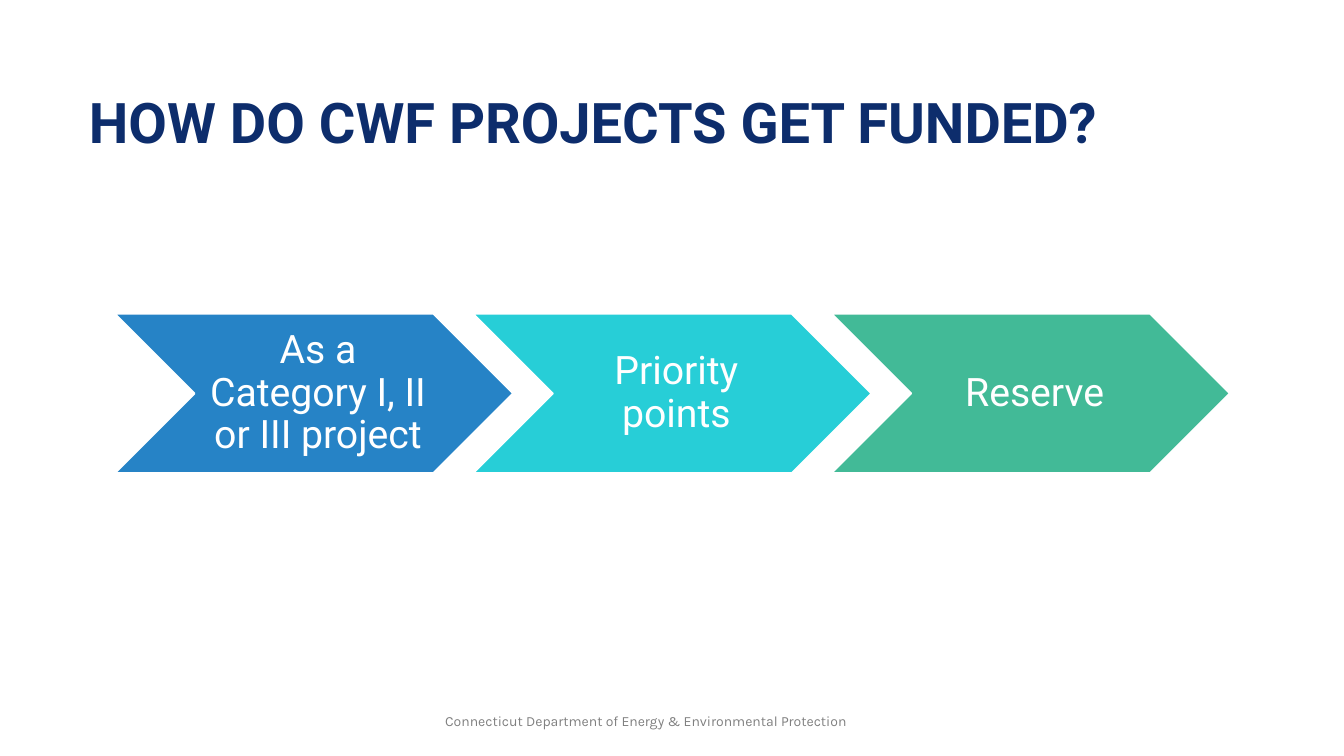
from pptx import Presentation
from pptx.dml.color import RGBColor
from pptx.enum.shapes import MSO_SHAPE
from pptx.enum.text import MSO_ANCHOR, MSO_AUTO_SIZE, PP_ALIGN
from pptx.util import Cm, Pt

NAVY = RGBColor(0x0D, 0x2D, 0x6C)
GRAY = RGBColor(0x80, 0x80, 0x80)
WHITE = RGBColor(0xFF, 0xFF, 0xFF)
BLUE = RGBColor(0x26, 0x83, 0xC6)
CYAN = RGBColor(0x27, 0xCE, 0xD7)
GREEN = RGBColor(0x42, 0xBA, 0x97)

TITLE = {"name": "Roboto", "size": Pt(40), "bold": True}
STEP = {"name": "Roboto", "size": Pt(28)}
FOOT = {"name": "Karla", "size": Pt(10)}

STEPS = [
    ("As a Category I, II or III project", BLUE),
    ("Priority points", CYAN),
    ("Reserve", GREEN),
]
LEFT, TOP, WIDE, HIGH = 2.9, 7.91, 10.03, 4.01
PITCH = 9.03


def put_text(shape, text, style, color, align, anchor, inset, spacing=1.0):
    """Fill a shape with one paragraph; inset is left, top, right, bottom in cm."""
    frame = shape.text_frame
    sides = ("margin_left", "margin_top", "margin_right", "margin_bottom")
    form = {"word_wrap": True, "auto_size": MSO_AUTO_SIZE.NONE,
            "vertical_anchor": anchor}
    form.update(zip(sides, map(Cm, inset)))
    for key, value in form.items():
        setattr(frame, key, value)
    para = frame.paragraphs[0]
    para.alignment = align
    para.line_spacing = spacing
    run = para.add_run()
    run.text = text
    for key, value in style.items():
        setattr(run.font, key, value)
    run.font.color.rgb = color


def add_title(slide, text):
    title = slide.shapes.title
    box = {"left": Cm(2.24), "top": Cm(2.54),
           "width": Cm(29.39), "height": Cm(3.3)}
    for key, value in box.items():
        setattr(title, key, value)
    put_text(title, text, TITLE, NAVY, PP_ALIGN.LEFT, MSO_ANCHOR.TOP,
             (0, 0, 0, 0), 0.8)


def add_step(slide, left, text, color):
    step = slide.shapes.add_shape(
        MSO_SHAPE.CHEVRON, Cm(left), Cm(TOP), Cm(WIDE), Cm(HIGH))
    step.shadow.inherit = False
    step.fill.solid()
    step.fill.fore_color.rgb = color
    step.line.color.rgb = WHITE
    step.line.width = Pt(1.25)
    put_text(step, text, STEP, WHITE, PP_ALIGN.CENTER, MSO_ANCHOR.MIDDLE,
             (0.3, 0.1, 0.1, 0.1), 0.9)


def add_footer(slide, text):
    foot = slide.shapes.add_textbox(Cm(11.22), Cm(17.65), Cm(11.43), Cm(1.02))
    put_text(foot, text, FOOT, GRAY, PP_ALIGN.LEFT, MSO_ANCHOR.MIDDLE,
             (0, 0.13, 0, 0.13))


def main():
    deck = Presentation()
    deck.slide_width, deck.slide_height = Cm(33.87), Cm(19.05)
    slide = deck.slides.add_slide(deck.slide_layouts[5])
    add_title(slide, "HOW DO CWF PROJECTS GET FUNDED?")
    add_footer(slide,
               "Connecticut Department of Energy & Environmental Protection")
    for i, (text, color) in enumerate(STEPS):
        add_step(slide, LEFT + i * PITCH, text, color)
    deck.save("out.pptx")


if __name__ == "__main__":
    main()
